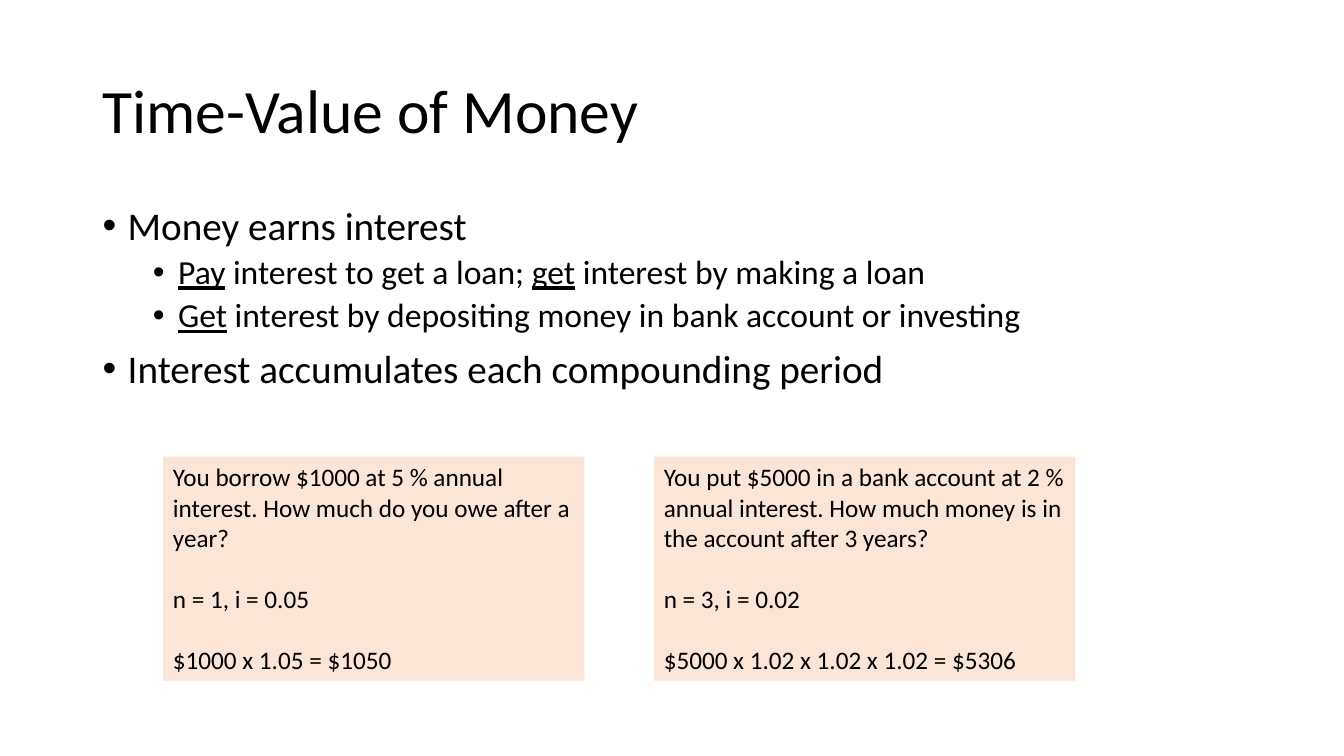
"""Build the Time-Value of Money slide."""
from dataclasses import dataclass

from lxml.etree import SubElement
from pptx import Presentation
from pptx.dml.color import RGBColor as Color
from pptx.enum.shapes import MSO_SHAPE as Shape
from pptx.enum.text import MSO_ANCHOR as Anchor, MSO_AUTO_SIZE as AutoSize, PP_ALIGN as Align
from pptx.oxml.ns import qn
from pptx.util import Cm, Pt

TITLE = "Time-Value of Money"
POINTS = [
    (0, [("Money earns interest", False)]),
    (1, [("Pay", True), (" interest to get a loan; ", False),
         ("get", True), (" interest by making a loan", False)]),
    (1, [("Get", True),
         (" interest by depositing money in bank account or investing", False)]),
    (0, [("Interest accumulates each compounding period", False)]),
]
EXAMPLES = [
    ["You borrow $1000 at 5 % annual interest. How much do you owe after a year?",
     "n = 1, i = 0.05",
     "$1000 x 1.05 = $1050"],
    ["You put $5000 in a bank account at 2 % annual interest. "
     "How much money is in the account after 3 years?",
     "n = 3, i = 0.02",
     "$5000 x 1.02 x 1.02 x 1.02 = $5306"],
]


@dataclass(frozen=True)
class Theme:
    font: str = "Calibri"
    ink: Color = Color(0, 0, 0)
    panel: Color = Color(0xFB, 0xE5, 0xD6)
    title: int = 44
    levels: tuple = (28, 24)
    example: int = 18


THEME = Theme()


def write(para, spans, size, before=0, line=1.0, indent=None):
    para.alignment = Align.LEFT
    para.line_spacing = line
    para.space_before, para.space_after = Pt(before), Pt(0)
    for text, underlined in spans:
        span = para.add_run()
        span.text = text
        span.font.name = THEME.font
        span.font.size = Pt(size)
        span.font.color.rgb = THEME.ink
        span.font.underline = underlined
    if indent is not None:
        props = para._p.get_or_add_pPr()
        props.set("marL", str(Cm(indent)))
        props.set("indent", str(Cm(-0.635)))
        SubElement(props, qn("a:buFont"), typeface="Arial")
        SubElement(props, qn("a:buChar"), char="•")


def place(box, left, top, width, height, anchor):
    box.left, box.top, box.width, box.height = Cm(left), Cm(top), Cm(width), Cm(height)
    frame = box.text_frame
    frame.word_wrap = True
    frame.auto_size = AutoSize.NONE
    frame.vertical_anchor = anchor
    return frame


def paragraphs(frame, count):
    return [frame.paragraphs[0]] + [frame.add_paragraph() for _ in range(count - 1)]


def add_example(page, index, lines):
    box = page.shapes.add_shape(Shape.RECTANGLE, 0, 0, 0, 0)
    box.shadow.inherit = False
    box.fill.solid()
    box.fill.fore_color.rgb = THEME.panel
    box.line.fill.background()
    frame = place(box, 4.11 + 12.37 * index, 11.51, 10.62, 5.64, Anchor.TOP)
    for row, para in enumerate(paragraphs(frame, len(lines))):
        write(para, [(lines[row], False)], THEME.example, before=22 if row else 0)


def main():
    deck = Presentation()
    deck.slide_width, deck.slide_height = Cm(33.87), Cm(19.05)
    page = deck.slides.add_slide(deck.slide_layouts[1])

    heading = place(page.shapes.title, 2.33, 1.01, 29.21, 3.68, Anchor.MIDDLE)
    write(heading.paragraphs[0], [(TITLE, False)], THEME.title, line=0.9)

    body = place(page.placeholders[1], 2.33, 5.07, 29.21, 12.09, Anchor.TOP)
    for para, (level, spans) in zip(paragraphs(body, len(POINTS)), POINTS):
        para.level = level
        write(para, spans, THEME.levels[level], before=(10, 5)[level],
              line=0.9, indent=0.635 + 1.27 * level)

    for index, lines in enumerate(EXAMPLES):
        add_example(page, index, lines)
    deck.save("out.pptx")


if __name__ == "__main__":
    main()
